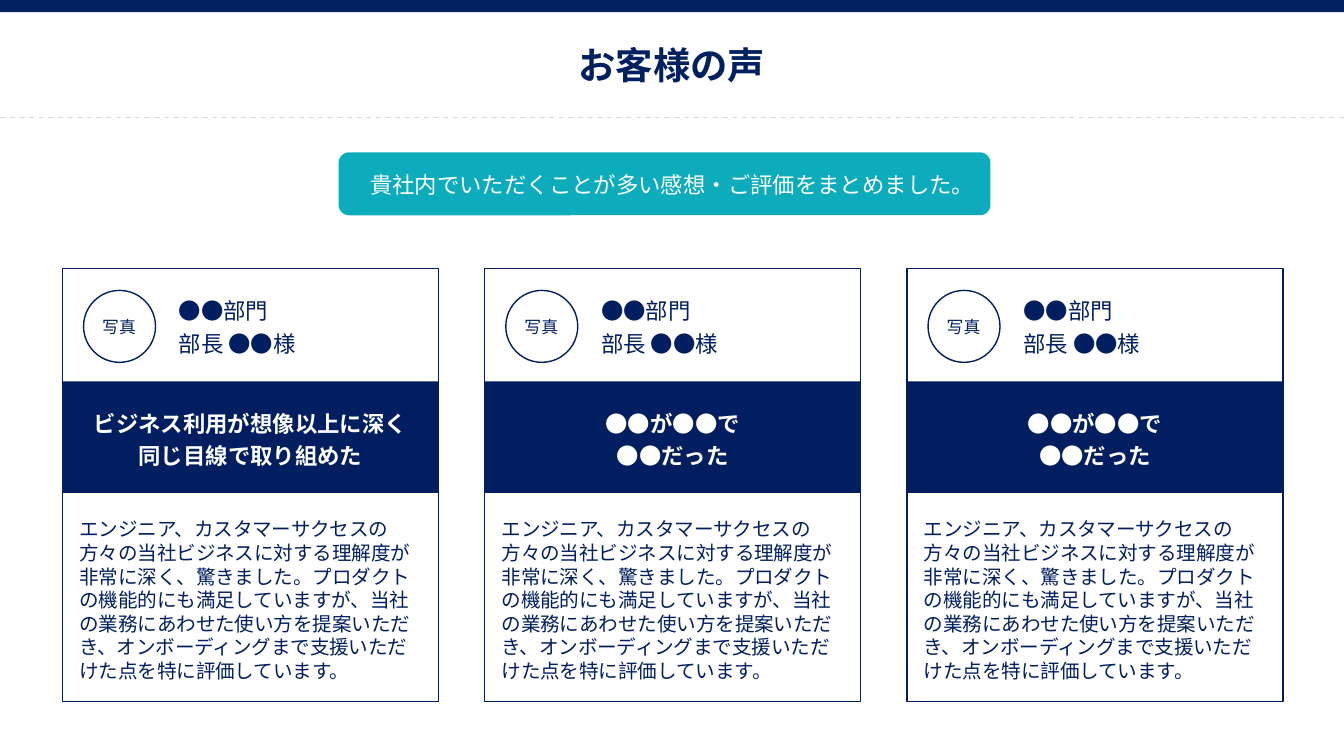
import pptx
import pptx.util
import pptx.dml.color
import pptx.enum.dml
import pptx.enum.shapes
import pptx.enum.text
import pptx.oxml
import pptx.oxml.ns

Cm, Pt = pptx.util.Cm, pptx.util.Pt
SHAPE = pptx.enum.shapes.MSO_SHAPE
ALIGN = pptx.enum.text.PP_ALIGN
ANCHOR = pptx.enum.text.MSO_ANCHOR

TITLE = "お客様の声"
LEAD = "貴社内でいただくことが多い感想・ご評価をまとめました。"
PERSON = ["●●部門", "部長 ●●様"]
COMMENT = (
    "エンジニア、カスタマーサクセスの方々の当社ビジネスに対する理解度が非常に深く、"
    "驚きました。プロダクトの機能的にも満足していますが、当社の業務にあわせた使い方を"
    "提案いただき、オンボーディングまで支援いただけた点を特に評価しています。"
)
VOICES = [
    {"quote": ["ビジネス利用が想像以上に深く", "同じ目線で取り組めた"], "quote_w": 6.5},
    {"quote": ["●●が●●で", "●●だった"], "quote_w": 3.07},
    {"quote": ["●●が●●で", "●●だった"], "quote_w": 3.07},
]

THEME = {
    "font": "Noto Sans CJK JP",
    "line_height": 1.2,
    "navy": "002060",
    "card": "011F60",
    "teal": "0DACBD",
    "white": "FFFFFF",
    "rule": "D9D9D9",
    "title": 20,
    "lead": 12,
    "body": 10.5,
    "photo": 9,
}
SLIDE_W, SLIDE_H = 25.4, 14.29
CARD_X, CARD_Y, CARD_W, CARD_H, CARD_STEP = 1.18, 5.08, 7.11, 8.18, 7.98


def rgb(name):
    return pptx.dml.color.RGBColor.from_string(THEME[name])


def box(x, y, w, h):
    return Cm(x), Cm(y), Cm(w), Cm(h)


def add_block(shapes, kind, place, fill, line=None):
    sp = shapes.add_shape(kind, *box(*place))
    sp.shadow.inherit = False
    sp.fill.solid()
    sp.fill.fore_color.rgb = rgb(fill)
    if line:
        sp.line.color.rgb = rgb(line)
        sp.line.width = Pt(0.75)
    else:
        sp.line.fill.background()
    return sp


def write(sp, lines, size, color, bold=False, align=ALIGN.LEFT, after=0, wrap=False):
    tf = sp.text_frame
    frame = {
        "word_wrap": wrap, "vertical_anchor": ANCHOR.TOP,
        "margin_left": Cm(0.25), "margin_right": Cm(0.25),
        "margin_top": Cm(0.13), "margin_bottom": Cm(0.13),
    }
    for name, value in frame.items():
        setattr(tf, name, value)
    para = {
        "alignment": align, "space_before": Pt(0), "space_after": Pt(after),
        "line_spacing": Pt(THEME[size] * THEME["line_height"]),
    }
    font = {"name": THEME["font"], "size": Pt(THEME[size]), "bold": bold}
    for i, line in enumerate(lines):
        p = tf.add_paragraph() if i else tf.paragraphs[0]
        for name, value in para.items():
            setattr(p, name, value)
        r = p.add_run()
        r.text = line
        for name, value in font.items():
            setattr(r.font, name, value)
        r.font.color.rgb = rgb(color)
        ea = pptx.oxml.parse_xml(f'<a:ea {pptx.oxml.ns.nsdecls("a")} typeface="{THEME["font"]}"/>')
        r.font._element.find(pptx.oxml.ns.qn("a:latin")).addnext(ea)


def add_text(shapes, place, lines, size, color, **fmt):
    write(shapes.add_textbox(*box(*place)), lines, size, color, **fmt)


def add_header(slide):
    add_block(slide.shapes, SHAPE.RECTANGLE, (0, 0, SLIDE_W, 0.23), "navy")
    title = slide.shapes.title
    title.left, title.top, title.width, title.height = box(10.67, 0.66, 4.06, 1.12)
    write(title, [TITLE], "title", "navy", bold=True, align=ALIGN.CENTER)
    rule = slide.shapes.add_connector(
        pptx.enum.shapes.MSO_CONNECTOR.STRAIGHT, Cm(0), Cm(2.22), Cm(SLIDE_W), Cm(2.22))
    rule.line.color.rgb = rgb("rule")
    rule.line.width = Pt(0.75)
    rule.line.dash_style = pptx.enum.dml.MSO_LINE.DASH
    rule._element.spPr.append(
        pptx.oxml.parse_xml(f'<a:effectLst {pptx.oxml.ns.nsdecls("a")}/>'))


def add_lead(slide):
    shapes = slide.shapes.add_group_shape().shapes
    add_block(shapes, SHAPE.ROUNDED_RECTANGLE, (6.4, 2.88, 12.32, 1.19), "teal")
    add_text(shapes, (6.68, 3.1, 12.06, 0.76), [LEAD], "lead", "white", align=ALIGN.CENTER)


def add_card(slide, x, y, voice):
    shapes = slide.shapes.add_group_shape().shapes
    quote_x = x + (CARD_W - voice["quote_w"]) / 2
    add_block(shapes, SHAPE.RECTANGLE, (x, y, CARD_W, CARD_H), "white", "card")
    add_text(shapes, (x + 0.07, y + 4.57, 6.96, 3.4), [COMMENT], "body", "card",
             after=6, wrap=True)
    add_block(shapes, SHAPE.OVAL, (x + 0.4, y + 0.41, 1.36, 1.36), "white", "card")
    add_text(shapes, (x + 0.5, y + 0.78, 1.14, 0.64), ["写真"], "photo", "navy",
             align=ALIGN.CENTER)
    add_text(shapes, (x + 1.95, y + 0.41, 2.77, 1.4), PERSON, "lead", "card", after=3)
    add_block(shapes, SHAPE.RECTANGLE, (x, y + 2.13, CARD_W, 2.11), "card")
    add_text(shapes, (quote_x, y + 2.54, voice["quote_w"], 1.4), voice["quote"],
             "lead", "white", bold=True, align=ALIGN.CENTER, after=3)


def main():
    prs = pptx.Presentation()
    prs.slide_width, prs.slide_height = Cm(SLIDE_W), Cm(SLIDE_H)
    slide = prs.slides.add_slide(prs.slide_layouts[5])
    add_lead(slide)
    add_header(slide)
    for i, voice in enumerate(VOICES):
        add_card(slide, CARD_X + i * CARD_STEP, CARD_Y, voice)
    prs.save("out.pptx")


if __name__ == "__main__":
    main()
